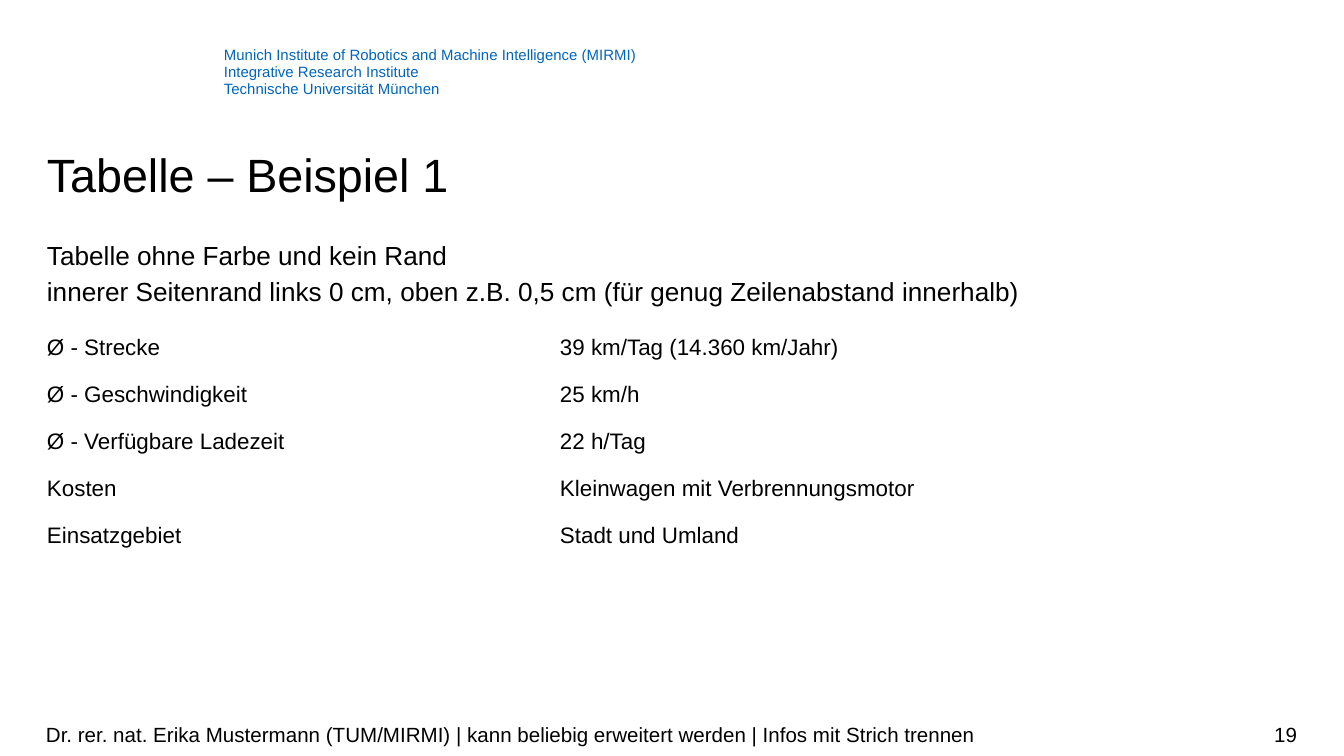
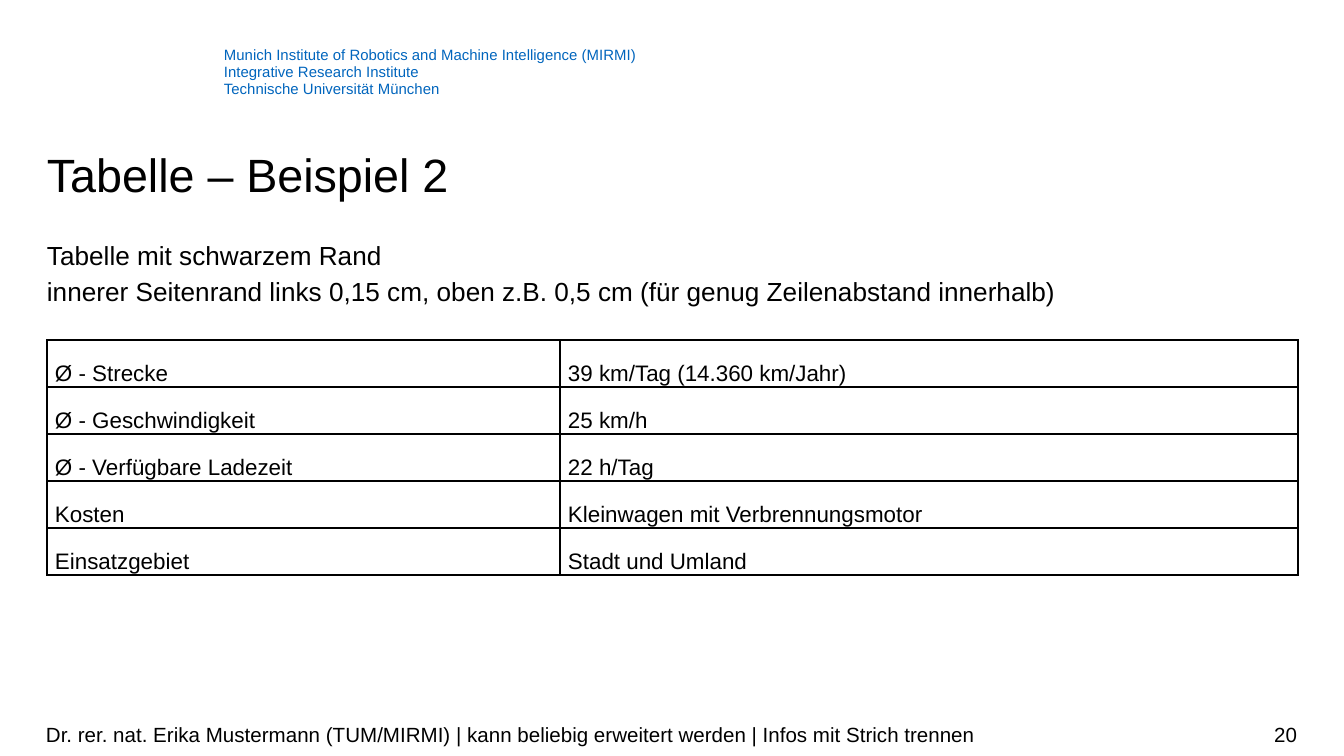
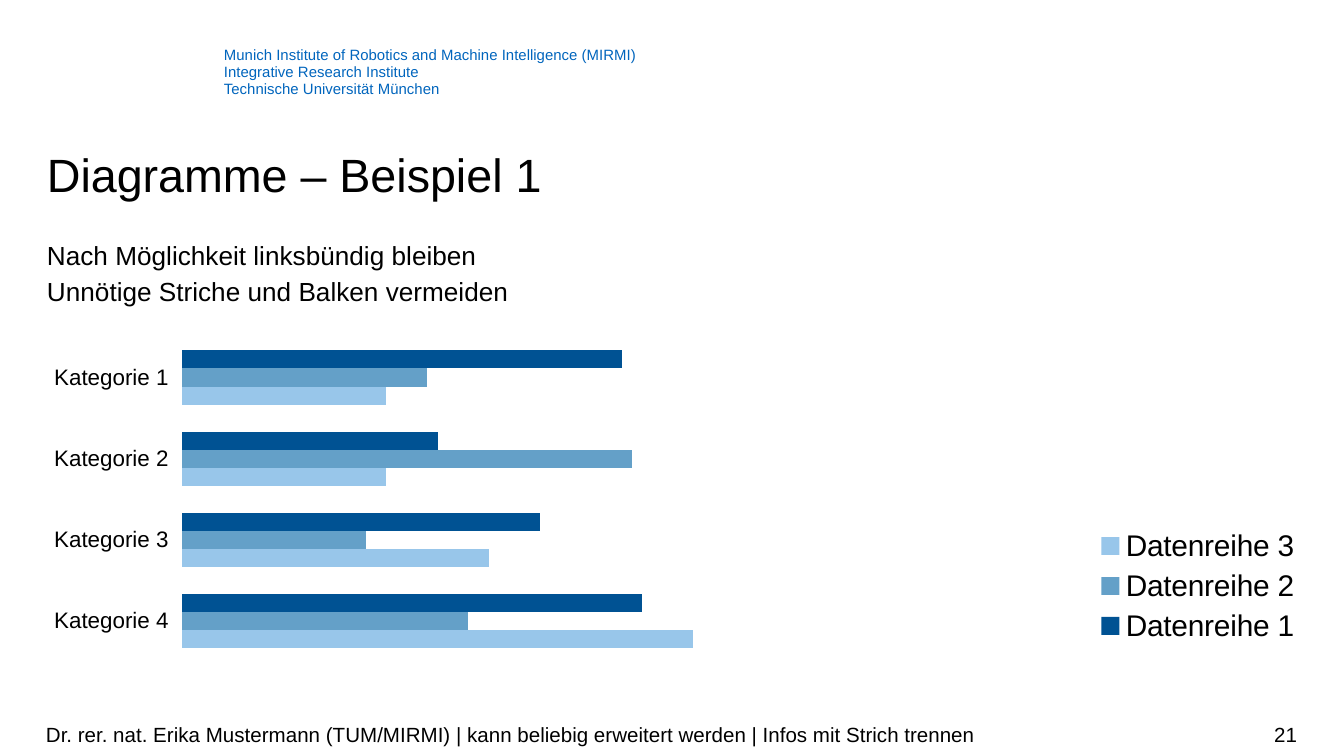
from lxml import etree
from pptx import Presentation
from pptx import util as u
from pptx.chart.data import CategoryChartData
from pptx.dml.color import RGBColor
from pptx.enum import chart as charts, text
from pptx.oxml.ns import qn

HUES = {"ink": "000000", "blue": "0065BD", "navy": "005293", "steel": "64A0C8", "sky": "98C6EA"}
FONT = "Arial"
PX = 914400 / 134.4
BARE = "{2D5ABB26-0587-4C30-8999-92F81FD0307C}"
LEFT, WIDE, ROW = 47, 1251, 47
COLS = (513, 738)
HEAD = (
    "Munich Institute of Robotics and Machine Intelligence (MIRMI)\n"
    "Integrative Research Institute\n"
    "Technische Universität München"
)
FOOT = "Dr. rer. nat. Erika Mustermann (TUM/MIRMI) | kann beliebig erweitert werden | Infos mit Strich trennen"
FACTS = [
    ("Ø - Strecke", "39 km/Tag (14.360 km/Jahr)"),
    ("Ø - Geschwindigkeit", "25 km/h"),
    ("Ø - Verfügbare Ladezeit", "22 h/Tag"),
    ("Kosten", "Kleinwagen mit Verbrennungsmotor"),
    ("Einsatzgebiet", "Stadt und Umland"),
]
CATS = [f"Kategorie {n}" for n in range(1, 5)]
BARS = [
    ("Datenreihe 1", (86, 50, 70, 90), "navy"),
    ("Datenreihe 2", (48, 88, 36, 56), "steel"),
    ("Datenreihe 3", (40, 40, 60, 100), "sky"),
]


def px(n):
    return u.Emu(round(n * PX))


def ink(name):
    return RGBColor.from_string(HUES[name])


def style(font, size, hue="ink"):
    font.name, font.size = FONT, u.Pt(size)
    font.color.rgb = ink(hue)


def write(frame, words, size=12, hue="ink", lead=None, align=None):
    for i, line in enumerate(words.split("\n")):
        para = frame.add_paragraph() if i else frame.paragraphs[0]
        para.text = line
        para.alignment = align
        if lead:
            para.line_spacing = lead
        for run in para.runs:
            style(run.font, size, hue)
        for br in para._p.findall(qn("a:br")):
            etree.SubElement(br, qn("a:rPr"), sz=str(size * 100))


def edge(cell, hue, width):
    props = cell._tc.get_or_add_tcPr()
    for i, side in enumerate("LRTB"):
        line = etree.Element(qn(f"a:ln{side}"), w=str(u.Pt(width)))
        fill = etree.SubElement(line, qn("a:solidFill"))
        etree.SubElement(fill, qn("a:srgbClr"), val=HUES[hue])
        props.insert(i, line)


def place(node, spot, inner, **sizes):
    old = node.find(qn("c:layout"))
    if old is not None:
        node.remove(old)
    layout = etree.Element(qn("c:layout"))
    manual = etree.SubElement(layout, qn("c:manualLayout"))
    modes = {"xMode": "edge", "yMode": "edge", **sizes}
    if inner:
        modes = {"layoutTarget": "inner", **modes}
    for key, val in modes.items():
        etree.SubElement(manual, qn(f"c:{key}"), val=str(val))
    node.insert(spot, layout)


class Deck:
    def __init__(self):
        self.prs = Presentation()
        self.prs.slide_width, self.prs.slide_height = px(1344), px(756)
        self.slide = None

    def page(self, num, title, body):
        self.slide = self.prs.slides.add_slide(self.prs.slide_layouts[6])
        self.label(HEAD, 224, 47, 429, 50, grow=True, size=8, hue="blue", lead=u.Pt(9))
        self.label(title, LEFT, 142, WIDE, 60, grow=True, size=25, lead=u.Pt(32))
        self.label(body, LEFT, 235, WIDE, 74, size=14, lead=1.14)
        foot = {"mid": True, "pad": 7, "size": 11}
        self.label(FOOT, 46, 714, 950, 40, **foot)
        self.label(str(num), 996, 714, 301, 40, align=text.PP_ALIGN.RIGHT, **foot)

    def label(self, words, x, y, w, h, grow=False, mid=False, pad=0, **form):
        frame = self.slide.shapes.add_textbox(px(x), px(y), px(w), px(h)).text_frame
        frame.word_wrap = True
        frame.margin_left = frame.margin_right = 0
        frame.margin_top = frame.margin_bottom = px(pad)
        if grow:
            frame.auto_size = text.MSO_AUTO_SIZE.SHAPE_TO_FIT_TEXT
        if mid:
            frame.vertical_anchor = text.MSO_ANCHOR.MIDDLE
        write(frame, words, **form)

    def table(self, rows, y, pad=0, border=False):
        shape = self.slide.shapes.add_table(
            len(rows), len(COLS), px(LEFT), px(y), px(WIDE), px(ROW * len(rows))
        )
        grid = shape.table
        grid.first_row = grid.horz_banding = False
        grid._tbl.tblPr.find(qn("a:tableStyleId")).text = BARE
        for col, width in zip(grid.columns, COLS):
            col.width = px(width)
        for r, row in enumerate(rows):
            grid.rows[r].height = px(ROW)
            for c, words in enumerate(row):
                cell = grid.cell(r, c)
                cell.margin_left, cell.margin_top = px(pad), px(20)
                cell.margin_right = cell.margin_bottom = 0
                cell.vertical_anchor = text.MSO_ANCHOR.MIDDLE
                cell.fill.background()
                write(cell.text_frame, words)
                if border:
                    edge(cell, "ink", 1)

    def chart(self, cats, bars, x, y, w, h):
        data = CategoryChartData()
        data.categories = cats
        for name, vals, _ in bars:
            data.add_series(name, vals)
        kind = charts.XL_CHART_TYPE.BAR_CLUSTERED
        chart = self.slide.shapes.add_chart(kind, px(x), px(y), px(w), px(h), data).chart
        style(chart.font, 16)
        chart.has_title = False
        plot = chart.plots[0]
        plot.gap_width, plot.overlap, plot.vary_by_categories = 150, 0, False
        for series, (_, _, hue) in zip(plot.series, bars):
            series.format.fill.solid()
            series.format.fill.fore_color.rgb = ink(hue)
        axis = chart.category_axis
        axis.reverse_order = True
        axis.format.line.fill.background()
        style(axis.tick_labels.font, 12)
        scale = chart.value_axis
        scale.visible = scale.has_major_gridlines = False
        scale.minimum_scale, scale.maximum_scale = 0, 120
        chart.has_legend = True
        legend = chart.legend
        legend.position = charts.XL_LEGEND_POSITION.RIGHT
        legend.include_in_layout = False
        style(legend.font, 16)
        area = chart._chartSpace.chart.plotArea
        place(area, 0, True, x=0.125, y=0.003, w=0.462, h=0.94)
        place(legend._element, 1, False, x=0.81, y=0.54, w=0.16, h=0.37)


def main():
    deck = Deck()
    deck.page(
        19,
        "Tabelle – Beispiel 1",
        "Tabelle ohne Farbe und kein Rand\v"
        "innerer Seitenrand links 0 cm, oben z.B. 0,5 cm (für genug Zeilenabstand innerhalb)",
    )
    deck.table(FACTS, 314)
    deck.page(
        20,
        "Tabelle – Beispiel 2",
        "Tabelle mit schwarzem Rand\v"
        "innerer Seitenrand links 0,15 cm, oben z.B. 0,5 cm (für genug Zeilenabstand innerhalb)",
    )
    deck.table(FACTS, 340, pad=8, border=True)
    deck.page(
        21,
        "Diagramme – Beispiel 1",
        "Nach Möglichkeit linksbündig bleiben\vUnnötige Striche und Balken vermeiden",
    )
    deck.chart(CATS, BARS, 16, 336, 1328, 345)
    deck.prs.save("out.pptx")


if __name__ == "__main__":
    main()
